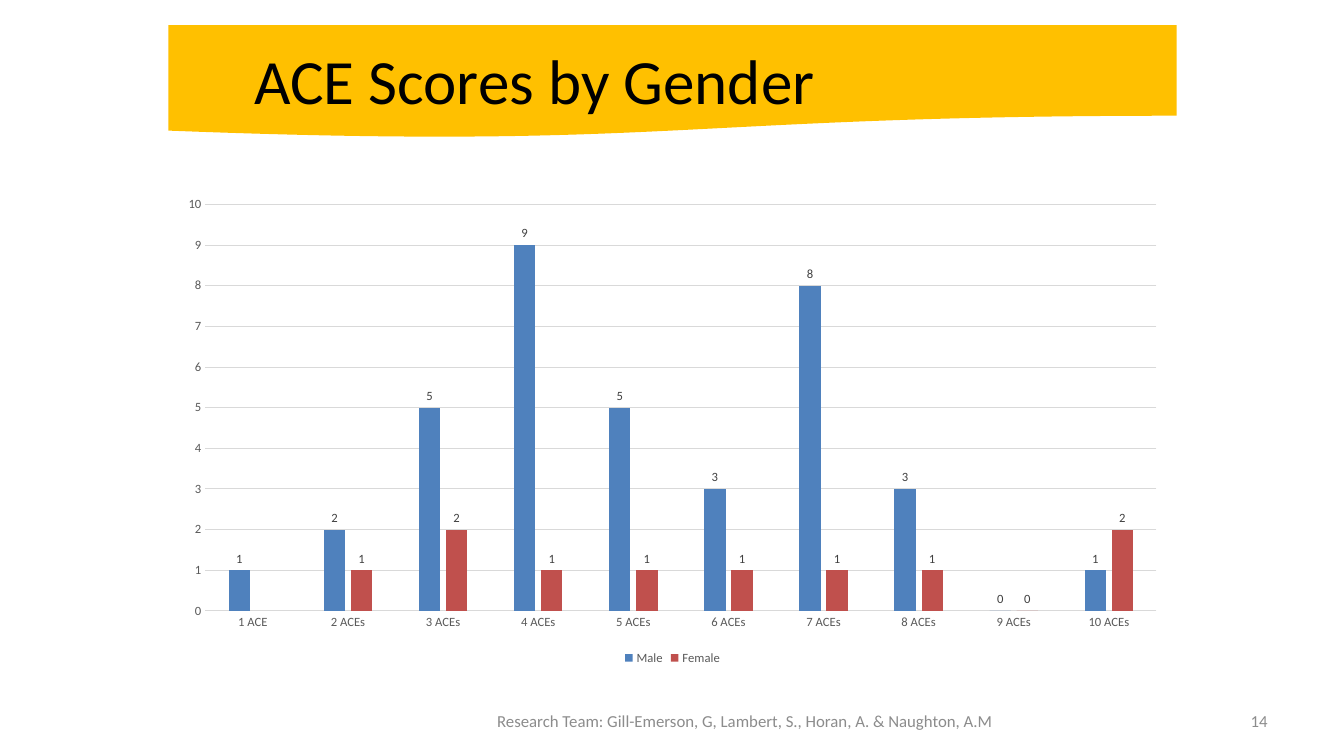
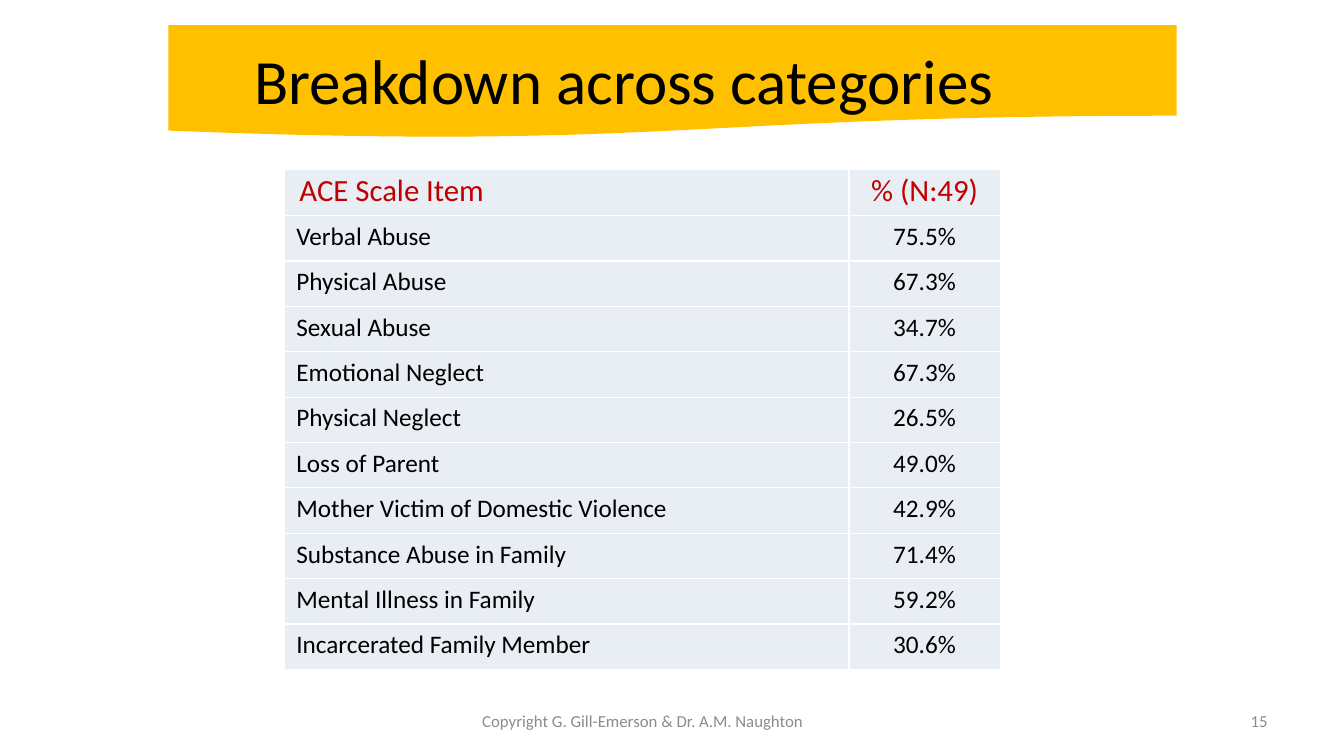
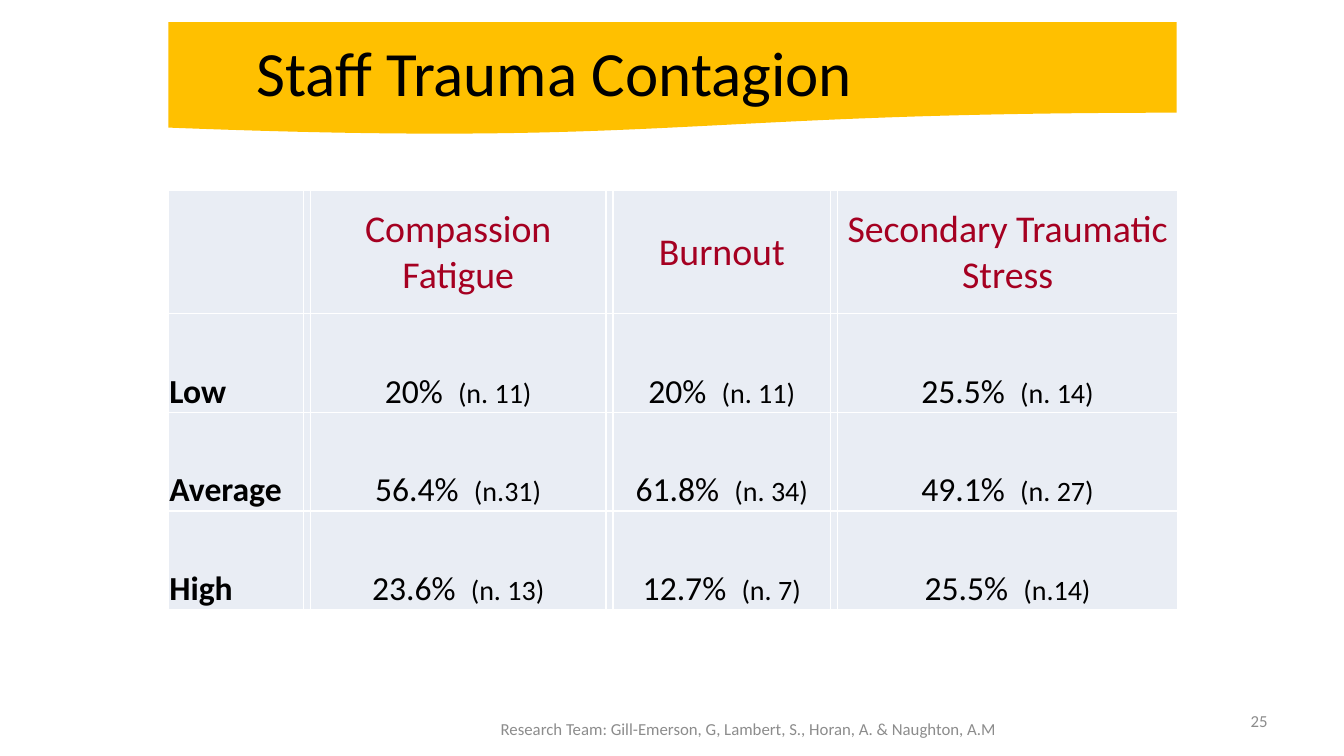
from dataclasses import dataclass
from typing import Optional

from pptx import Presentation
from pptx.chart.data import CategoryChartData
from pptx.dml.color import RGBColor
from pptx.enum.chart import XL_CHART_TYPE, XL_LABEL_POSITION, XL_LEGEND_POSITION, XL_TICK_MARK
from pptx.enum.shapes import MSO_SHAPE
from pptx.enum.text import MSO_ANCHOR, MSO_AUTO_SIZE, PP_ALIGN
from pptx.oxml import parse_xml
from pptx.oxml.ns import nsdecls
from pptx.util import Inches, Pt

FONT = "Calibri"
BLACK = RGBColor(0x00, 0x00, 0x00)
GOLD = RGBColor(0xFF, 0xC0, 0x00)
FOOTER_GREY = RGBColor(0x8C, 0x8C, 0x8C)
AXIS_GREY = RGBColor(0x59, 0x59, 0x59)
LABEL_GREY = RGBColor(0x40, 0x40, 0x40)
GRID_GREY = RGBColor(0xD9, 0xD9, 0xD9)
MALE_BLUE = RGBColor(0x4F, 0x81, 0xBD)
FEMALE_RED = RGBColor(0xC0, 0x50, 0x4D)
CELL_FILL = RGBColor(0xE9, 0xED, 0xF4)
HEADER_RED = RGBColor(0xC0, 0x00, 0x00)
HEADER_CRIMSON = RGBColor(0xA5, 0x00, 0x21)

TITLE_ONLY = 5
TEAM = "Research Team: Gill-Emerson, G, Lambert, S., Horan, A. & Naughton, A.M"


@dataclass(frozen=True)
class Box:
    left: float
    top: float
    width: float
    height: float

    def lengths(self):
        return [Inches(v) for v in (self.left, self.top, self.width, self.height)]


@dataclass(frozen=True)
class Page:
    title: str
    title_box: Box
    band_top: float
    number: str
    footer: str
    footer_box: Box


@dataclass(frozen=True)
class CellStyle:
    size: float
    color: RGBColor = BLACK
    bold: bool = False
    align: PP_ALIGN = PP_ALIGN.CENTER
    anchor: MSO_ANCHOR = MSO_ANCHOR.MIDDLE
    left: float = 0.01
    bottom: float = 0


SCORES_PAGE = Page("ACE Scores by Gender", Box(2.42, 0.36, 9.06, 0.89), 0.25,
                   "14", TEAM, Box(4.58, 6.95, 5.62, 0.4))
BREAKDOWN_PAGE = Page("Breakdown across categories", Box(2.42, 0.36, 9.06, 0.86), 0.25,
                      "15", "Copyright G. Gill-Emerson & Dr. A.M. Naughton",
                      Box(4.5, 6.95, 3.75, 0.4))
CONTAGION_PAGE = Page("Staff Trauma Contagion", Box(2.44, 0.28, 9.06, 0.89), 0.22,
                      "25", TEAM, Box(4.67, 6.95, 5.51, 0.55))

MALE = (1, 2, 5, 9, 5, 3, 8, 3, 0, 1)
FEMALE = (None, 1, 2, 1, 1, 1, 1, 1, 0, 2)

SCALE_ITEMS = [
    ("Verbal Abuse", "75.5%"),
    ("Physical Abuse", "67.3%"),
    ("Sexual Abuse", "34.7%"),
    ("Emotional Neglect", "67.3%"),
    ("Physical Neglect", "26.5%"),
    ("Loss of Parent", "49.0%"),
    ("Mother Victim of Domestic Violence", "42.9%"),
    ("Substance Abuse in Family", "71.4%"),
    ("Mental Illness in Family", "59.2%"),
    ("Incarcerated Family Member", "30.6%"),
]

MEASURES = ("Compassion Fatigue", "Burnout", "Secondary Traumatic Stress")
LEVELS = [
    ("Low", (("20%", "(n. 11)"), ("20%", "(n. 11)"), ("25.5%", "(n. 14)"))),
    ("Average", (("56.4%", "(n.31)"), ("61.8%", "(n. 34)"), ("49.1%", "(n. 27)"))),
    ("High", (("23.6%", "(n. 13)"), ("12.7%", "(n. 7)"), ("25.5%", "(n.14)"))),
]


def set_font(font, size: float, color: RGBColor, bold: bool = False) -> None:
    font.name = FONT
    font.size = Pt(size)
    font.color.rgb = color
    font.bold = bold


def add_footer_text(slide, box: Box, text: str, align: PP_ALIGN) -> None:
    tf = slide.shapes.add_textbox(*box.lengths()).text_frame
    tf.word_wrap = True
    tf.vertical_anchor = MSO_ANCHOR.MIDDLE
    p = tf.paragraphs[0]
    p.text = text
    p.alignment = align
    set_font(p.font, 12, FOOTER_GREY)


def add_page(prs, page: Page):
    """Add a slide with the gold band, title, footer and number."""
    slide = prs.slides.add_slide(prs.slide_layouts[TITLE_ONLY])
    title = slide.shapes.title
    title.left, title.top, title.width, title.height = page.title_box.lengths()
    tf = title.text_frame
    tf.auto_size = MSO_AUTO_SIZE.NONE
    tf.vertical_anchor = MSO_ANCHOR.TOP
    p = tf.paragraphs[0]
    p.text = page.title
    p.alignment = PP_ALIGN.LEFT
    set_font(p.font, 45, BLACK)

    # The band goes behind the title
    band = slide.shapes.add_shape(MSO_SHAPE.FLOWCHART_DOCUMENT,
                                  *Box(1.67, page.band_top, 10, 1.12).lengths())
    band.shadow.inherit = False
    band.fill.solid()
    band.fill.fore_color.rgb = GOLD
    band.line.fill.background()
    title._element.addprevious(band._element)

    add_footer_text(slide, Box(9.56, 6.95, 3.11, 0.4), page.number, PP_ALIGN.RIGHT)
    add_footer_text(slide, page.footer_box, page.footer, PP_ALIGN.CENTER)
    return slide


def add_plain_table(slide, left: float, top: float, cols: list[float], rows: list[float]):
    """Add a table of evenly filled cells with thin white borders."""
    box = Box(left, top, sum(cols), sum(rows))
    table = slide.shapes.add_table(len(rows), len(cols), *box.lengths()).table
    table.first_row = table.horz_banding = False
    for column, width in zip(table.columns, cols):
        column.width = Inches(width)
    for row, height in zip(table.rows, rows):
        row.height = Inches(height)
    for cell in table.iter_cells():
        cell.margin_left = cell.margin_right = cell.margin_top = Inches(0.01)
        cell.margin_bottom = 0
        tc_pr = cell._tc.get_or_add_tcPr()
        for side in ("lnL", "lnR", "lnT", "lnB"):
            tc_pr.append(parse_xml(
                f'<a:{side} {nsdecls("a")} w="12700"><a:solidFill>'
                f'<a:srgbClr val="FFFFFF"/></a:solidFill></a:{side}>'))
        cell.fill.solid()
        cell.fill.fore_color.rgb = CELL_FILL
    return table


def fill_cell(cell, text: str, style: CellStyle, note: Optional[str] = None) -> None:
    """Write the text, with an optional smaller note after a wide space."""
    cell.vertical_anchor = style.anchor
    cell.margin_left = Inches(style.left)
    cell.margin_bottom = Inches(style.bottom)
    p = cell.text_frame.paragraphs[0]
    p.alignment = style.align
    set_font(p.font, style.size, style.color, style.bold)
    p.add_run().text = text
    if note:
        space = p.add_run()
        space.text = " "
        space.font._element.set("spc", "540")
        r = p.add_run()
        r.text = note
        r.font.size = Pt(20)


def add_scores_chart(slide) -> None:
    data = CategoryChartData()
    data.categories = [f"{n} ACE{'s' if n > 1 else ''}" for n in range(1, 11)]
    data.add_series("Male", MALE)
    data.add_series("Female", FEMALE)
    chart = slide.shapes.add_chart(XL_CHART_TYPE.COLUMN_CLUSTERED,
                                   *Box(1.67, 1.86, 10, 4.78).lengths(), data).chart
    chart.has_title = False
    set_font(chart.font, 10, BLACK)

    # Columns and their labels
    plot = chart.plots[0]
    plot.gap_width = 219
    plot.overlap = -27
    plot.vary_by_categories = False
    for series, color in zip(plot.series, (MALE_BLUE, FEMALE_RED)):
        series.format.fill.solid()
        series.format.fill.fore_color.rgb = color
    plot.has_data_labels = True
    labels = plot.data_labels
    labels.show_value = True
    labels.position = XL_LABEL_POSITION.OUTSIDE_END
    set_font(labels.font, 9, LABEL_GREY)

    # Axes and legend
    for axis in (chart.category_axis, chart.value_axis):
        axis.major_tick_mark = axis.minor_tick_mark = XL_TICK_MARK.NONE
        set_font(axis.tick_labels.font, 9, AXIS_GREY)
    values = chart.value_axis
    values.minimum_scale, values.maximum_scale, values.major_unit = 0, 10, 1
    values.format.line.fill.background()
    for line in (chart.category_axis.format.line, values.major_gridlines.format.line):
        line.color.rgb = GRID_GREY
        line.width = Pt(0.75)
    chart.has_legend = True
    chart.legend.position = XL_LEGEND_POSITION.BOTTOM
    chart.legend.include_in_layout = False
    set_font(chart.legend.font, 9, AXIS_GREY)


def add_breakdown_table(slide) -> None:
    table = add_plain_table(slide, 2.82, 1.68, [5.6, 1.5], [0.46] + [0.45] * len(SCALE_ITEMS))
    for row, texts in enumerate([("ACE Scale Item", "% (N:49)"), *SCALE_ITEMS]):
        size, color, indent = (18, BLACK, 0.12) if row else (22, HEADER_RED, 0.15)
        item = CellStyle(size, color, align=PP_ALIGN.LEFT, left=indent, bottom=0.04)
        share = CellStyle(size, color, bottom=0.04)
        for col, style in enumerate((item, share)):
            fill_cell(table.cell(row, col), texts[col], style)


def add_contagion_table(slide) -> None:
    # Narrow empty columns separate the measures
    table = add_plain_table(slide, 1.67, 1.89, [1.34, 0.07, 2.93, 0.07, 2.16, 0.07, 3.37],
                            [1.22] + [0.98] * len(LEVELS))
    header = CellStyle(27, HEADER_CRIMSON)
    level_name = CellStyle(24, bold=True, align=PP_ALIGN.LEFT, anchor=MSO_ANCHOR.BOTTOM)
    result = CellStyle(24, anchor=MSO_ANCHOR.BOTTOM)
    for i, measure in enumerate(MEASURES, 1):
        fill_cell(table.cell(0, 2 * i), measure, header)
    for row, (level, results) in enumerate(LEVELS, 1):
        fill_cell(table.cell(row, 0), level, level_name)
        for i, (share, count) in enumerate(results, 1):
            fill_cell(table.cell(row, 2 * i), share, result, count)


def main() -> None:
    prs = Presentation()
    prs.slide_width, prs.slide_height = Inches(13.33), Inches(7.5)
    add_scores_chart(add_page(prs, SCORES_PAGE))
    add_breakdown_table(add_page(prs, BREAKDOWN_PAGE))
    add_contagion_table(add_page(prs, CONTAGION_PAGE))
    prs.save("out.pptx")


if __name__ == "__main__":
    main()
